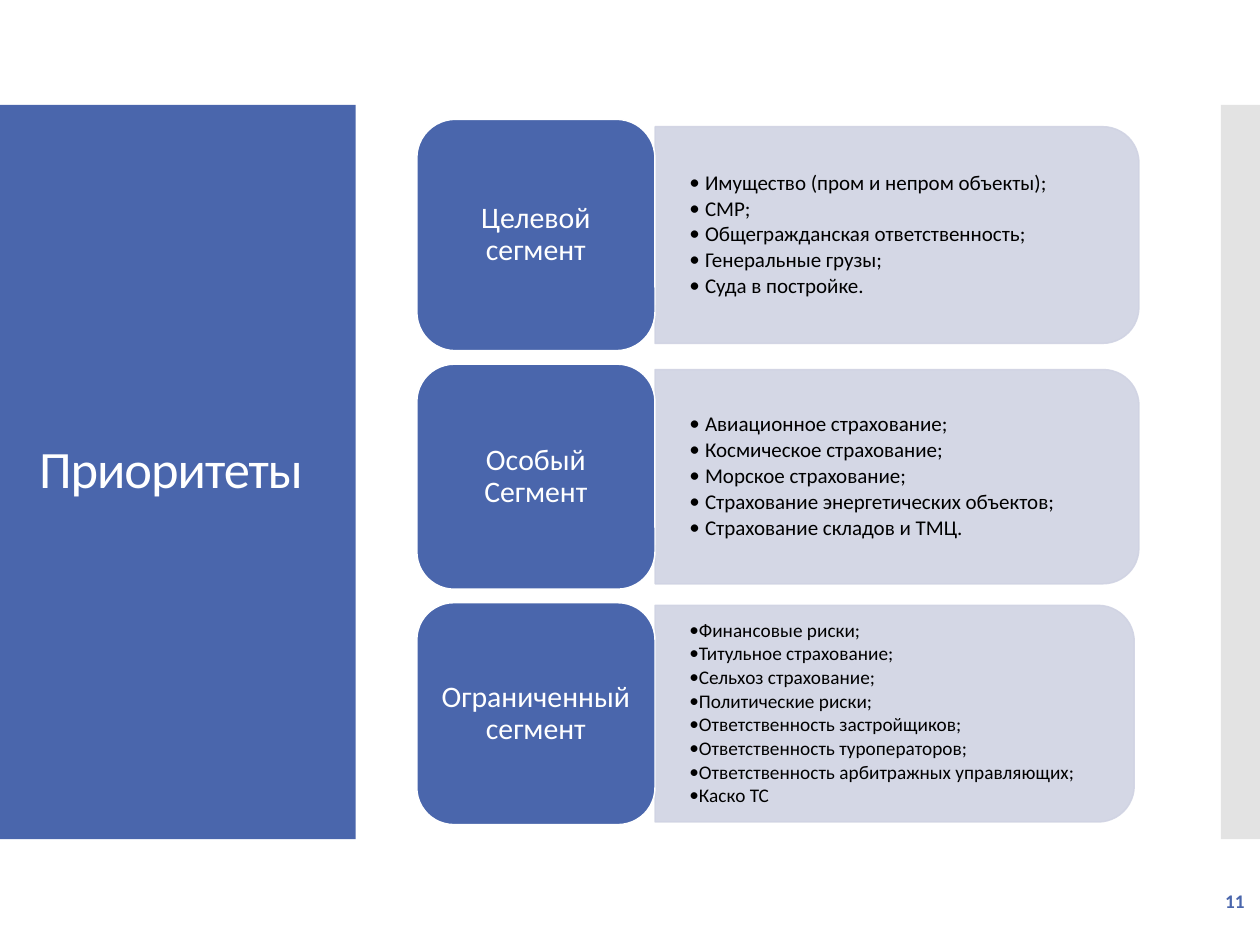
from lxml import etree
from pptx import Presentation
from pptx.dml.color import RGBColor
from pptx.enum.shapes import MSO_SHAPE
from pptx.enum.text import MSO_ANCHOR, PP_ALIGN
from pptx.oxml.ns import qn
from pptx.util import Pt

RECT = MSO_SHAPE.RECTANGLE
ROUNDED = MSO_SHAPE.ROUNDED_RECTANGLE
ROUNDED_TOP = MSO_SHAPE.ROUND_2_SAME_RECTANGLE
MIDDLE = MSO_ANCHOR.MIDDLE
LEFT, CENTER, RIGHT = PP_ALIGN.LEFT, PP_ALIGN.CENTER, PP_ALIGN.RIGHT

COLORS = {
    "blue": "4A66AC",
    "gray": "C8C8C8",
    "panel": "D0D3E3",
    "white": "FFFFFF",
    "black": "000000",
}
FONT = "Calibri"
LINE_WIDTH = 0.85

# Column and row geometry, in points
LABEL_LEFT, LABEL_WIDTH = 238.2, 136.1
PANEL_LEFT = LABEL_LEFT + LABEL_WIDTH
FIRST_TOP, ROW_GAP = 68.2, 7.7

SEGMENTS = [
    {"label": "Целевой сегмент", "height": 132.2, "panel": (276.5, 123.8),
     "size": 12, "indent": 9,
     "items": ["Имущество (пром и непром объекты);", "СМР;",
               "Общегражданская ответственность;", "Генеральные грузы;",
               "Суда в постройке."]},
    {"label": "Особый Сегмент", "height": 128.6, "panel": (276.5, 122.4),
     "size": 12, "indent": 9,
     "items": ["Авиационное страхование;", "Космическое страхование;",
               "Морское страхование;", "Страхование энергетических объектов;",
               "Страхование складов и ТМЦ."]},
    {"label": "Ограниченный сегмент", "height": 126.8, "panel": (273.8, 123.8),
     "size": 11, "indent": 4.5,
     "items": ["Финансовые риски;", "Титульное страхование;",
               "Сельхоз страхование;", "Политические риски;",
               "Ответственность застройщиков;", "Ответственность туроператоров;",
               "Ответственность арбитражных управляющих;", "Каско ТС"]},
]


def rgb(name):
    return RGBColor.from_string(COLORS[name])


def set_attributes(target, values):
    for name, value in values.items():
        setattr(target, name, value)


def format_frame(frame, horizontal=7.2, vertical=3.6):
    set_attributes(frame, {
        "word_wrap": True, "vertical_anchor": MIDDLE,
        "margin_left": Pt(horizontal), "margin_right": Pt(horizontal),
        "margin_top": Pt(vertical), "margin_bottom": Pt(vertical),
    })


def write_paragraph(paragraph, text, size, color, align=LEFT, bold=False,
                    spacing=0.9, after=0):
    set_attributes(paragraph, {"alignment": align, "line_spacing": spacing,
                               "space_before": Pt(0), "space_after": Pt(after)})
    run = paragraph.add_run()
    run.text = text
    set_attributes(run.font, {"name": FONT, "size": Pt(size), "bold": bold})
    run.font.color.rgb = rgb(color)
    return run


def add_bullet(paragraph, indent):
    paragraph.level = 1
    properties = paragraph._p.get_or_add_pPr()
    properties.set("marL", str(Pt(indent)))
    properties.set("indent", str(-Pt(indent)))
    etree.SubElement(properties, qn("a:buFont")).set("typeface", FONT)
    etree.SubElement(properties, qn("a:buChar")).set("char", "•")


def add_block(slide, preset, box, fill, line=None, opacity=100):
    block = slide.shapes.add_shape(preset, *(Pt(length) for length in box))
    block.shadow.inherit = False
    block.fill.solid()
    block.fill.fore_color.rgb = rgb(fill)
    if line:
        block.line.color.rgb = rgb(line)
        block.line.width = Pt(LINE_WIDTH)
    else:
        block.line.fill.background()
    if opacity < 100:
        for color in block._element.spPr.iter(qn("a:srgbClr")):
            etree.SubElement(color, qn("a:alpha")).set("val", str(opacity * 1000))
    return block


def add_text_frame(slide, box, **margins):
    frame = slide.shapes.add_textbox(*(Pt(length) for length in box)).text_frame
    format_frame(frame, **margins)
    return frame


def add_title(slide, text):
    title = slide.shapes.title
    set_attributes(title, {"left": Pt(15.1), "top": Pt(88.6),
                           "width": Pt(174.2), "height": Pt(362.2)})
    format_frame(title.text_frame)
    run = write_paragraph(title.text_frame.paragraphs[0], text, 30, "white")
    run.font._element.set("spc", "-60")
    # Bring the title in front of the side band
    title._element.getparent().append(title._element)


def add_segment(slide, segment, top):
    middle = top + segment["height"] / 2
    width, height = segment["panel"]

    # The panel is a top-rounded shape turned to face right
    panel_box = (PANEL_LEFT + (width - height) / 2, middle - width / 2, height, width)
    panel = add_block(slide, ROUNDED_TOP, panel_box, "panel", "panel", 90)
    panel.rotation = 90

    # Bulleted items
    items_box = (PANEL_LEFT, middle - height / 2 + 6, width - 6, height - 12)
    frame = add_text_frame(slide, items_box, horizontal=19.6, vertical=9.8)
    for number, item in enumerate(segment["items"]):
        paragraph = frame.add_paragraph() if number else frame.paragraphs[0]
        write_paragraph(paragraph, item, segment["size"], "black",
                        after=segment["size"] * 0.15)
        add_bullet(paragraph, segment["indent"])

    # Segment name
    label_box = (LABEL_LEFT, top, LABEL_WIDTH, segment["height"])
    label = add_block(slide, ROUNDED, label_box, "blue", "white")
    format_frame(label.text_frame, horizontal=5, vertical=3)
    write_paragraph(label.text_frame.paragraphs[0], segment["label"], 17, "white", CENTER)


def main():
    presentation = Presentation()
    presentation.slide_width, presentation.slide_height = Pt(720), Pt(540)
    slide = presentation.slides.add_slide(presentation.slide_layouts[5])

    # Side bands and title
    add_block(slide, RECT, (0, 59.9, 203.3, 419.6), "blue")
    add_block(slide, RECT, (697.6, 59.9, 22.4, 419.6), "gray", opacity=50)
    add_title(slide, "Приоритеты")

    # Segments, one below the other
    top = FIRST_TOP
    for segment in SEGMENTS:
        add_segment(slide, segment, top)
        top += segment["height"] + ROW_GAP

    # Page number
    page_number = add_text_frame(slide, (627.6, 500.6, 90.7, 28.8))
    write_paragraph(page_number.paragraphs[0], "11", 11, "blue", RIGHT,
                    bold=True, spacing=1.0)

    presentation.save("out.pptx")


if __name__ == "__main__":
    main()
